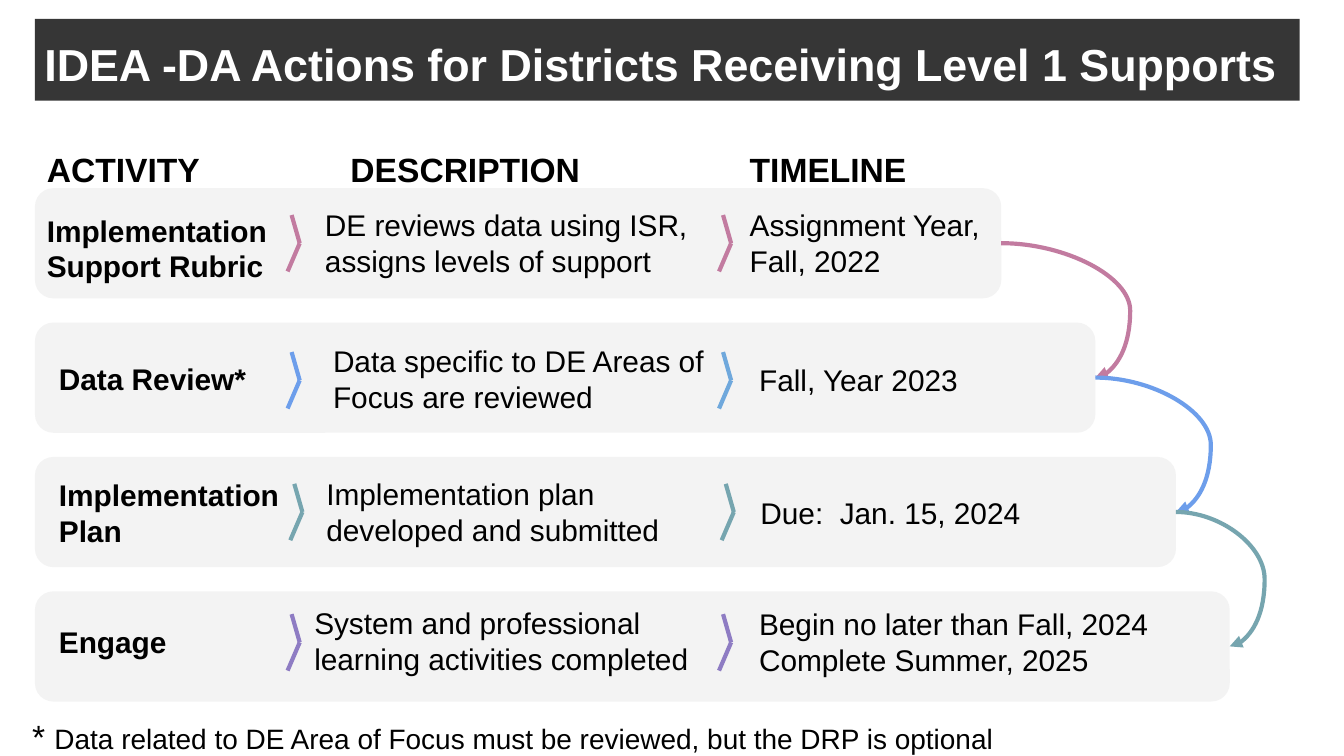
from dataclasses import dataclass
from itertools import pairwise

from lxml.etree import SubElement
from pptx import Presentation
from pptx.dml.color import RGBColor
from pptx.enum.shapes import MSO_CONNECTOR, MSO_SHAPE
from pptx.enum.text import MSO_ANCHOR, PP_ALIGN
from pptx.oxml.ns import qn
from pptx.util import Emu, Pt

PX_PER_INCH = 100
SLIDE_WIDTH = 1000
BAR_LEFT, BAR_TOP, BAR_HEIGHT, BAR_STEP = 26, 140, 82, 100
CELL_HEIGHT = 75
CHEVRON_LEFTS = (214, 535)
CURVE_BULGE = 26


@dataclass(frozen=True)
class Cell:
    text: str
    left: int
    top: int
    width: int
    middle: bool = False


@dataclass(frozen=True)
class Row:
    width: int
    activity: Cell
    description: Cell
    timeline: Cell
    colors: tuple[str, str]
    chevron_top: int
    chevron_shift: int = 0

    @property
    def right(self) -> int:
        return BAR_LEFT + self.width


HEADERS = [
    Cell("ACTIVITY", 25, 101, 189),
    Cell("DESCRIPTION", 251, 101, 223),
    Cell("TIMELINE", 548, 101, 182),
]

ROWS = [
    Row(719,
        Cell("Implementation\nSupport Rubric", 25, 147, 195, True),
        Cell("DE reviews data using ISR, assigns levels of support", 232, 144, 316),
        Cell("Assignment Year,\nFall, 2022", 548, 144, 195),
        ("C27BA0", "C27BA0"), 160),
    Row(789,
        Cell("Data Review*", 34, 244, 182, True),
        Cell("Data specific to DE Areas of Focus are reviewed", 238, 245, 310),
        Cell("Fall, Year 2023", 555, 245, 195, True),
        ("6D9EEB", "6FA8DC"), 262),
    Row(849,
        Cell("Implementation\nPlan", 34, 344, 189, True),
        Cell("Implementation plan developed and submitted", 233, 344, 316),
        Cell("Due:  Jan. 15, 2024", 556, 344, 287, True),
        ("76A5AF", "76A5AF"), 360, 2),
    Row(889,
        Cell("Engage", 34, 440, 182, True),
        Cell("System and professional\nlearning activities completed", 224, 440, 326),
        Cell("Begin no later than Fall, 2024\nComplete Summer, 2025", 555, 440, 316, True),
        ("8E7CC3", "8E7CC3"), 457),
]


def px(n: int) -> Emu:
    return Emu(n * 914400 // PX_PER_INCH)


def rgb(color: str) -> RGBColor:
    return RGBColor.from_string(color)


def set_insets(tf, x: int, top: int, bottom: int) -> None:
    tf.margin_left = tf.margin_right = px(x)
    tf.margin_top, tf.margin_bottom = px(top), px(bottom)
    tf.word_wrap = True


def format_run(r, size: int, bold: bool = False, color: str = "000000") -> None:
    r.font.name = "Arial"
    r.font.size = Pt(size)
    r.font.bold = bold
    r.font.color.rgb = rgb(color)


def add_text(s, cell: Cell, height: int, size: int, bold: bool = False):
    box = s.shapes.add_textbox(px(cell.left), px(cell.top), px(cell.width), px(height))
    tf = box.text_frame
    set_insets(tf, 10, 10, 10)
    tf.vertical_anchor = MSO_ANCHOR.MIDDLE if cell.middle else MSO_ANCHOR.TOP
    tf.text = cell.text
    for p in tf.paragraphs:
        for r in p.runs:
            format_run(r, size, bold)
    return tf


def add_block(s, kind, left: int, top: int, width: int, height: int, color: str):
    sp = s.shapes.add_shape(kind, px(left), px(top), px(width), px(height))
    sp.shadow.inherit = False
    sp.fill.solid()
    sp.fill.fore_color.rgb = rgb(color)
    sp.line.fill.background()
    return sp


def add_line(s, kind, x1: int, y1: int, x2: int, y2: int, color: str):
    line = s.shapes.add_connector(kind, px(x1), px(y1), px(x2), px(y2))
    line.line.color.rgb = rgb(color)
    line.line.width = Pt(2.25)
    SubElement(line._element.spPr, qn("a:effectLst"))
    return line


def add_chevron(s, left: int, top: int, color: str) -> None:
    points = [(left + 3, top), (left + 9, top + 21), (left, top + 42)]
    for start, end in pairwise(points):
        add_line(s, MSO_CONNECTOR.STRAIGHT, *start, *end, color)


def add_curve(s, x1: int, y1: int, x2: int, y2: int, color: str) -> None:
    curve = add_line(s, MSO_CONNECTOR.CURVE, x1, y1, x2, y2, color)
    bend = round((x2 - x1 + CURVE_BULGE) / (x2 - x1) * 100000)
    properties = curve._element.spPr
    guides = properties.find(qn("a:prstGeom")).get_or_add_avLst()
    SubElement(guides, qn("a:gd"), name="adj1", fmla=f"val {bend}")
    SubElement(properties.find(qn("a:ln")), qn("a:tailEnd"), type="triangle")


def add_row(s, row: Row, top: int) -> None:
    add_block(s, MSO_SHAPE.FLOWCHART_ALTERNATE_PROCESS,
              BAR_LEFT, top, row.width, BAR_HEIGHT, "F3F3F3")
    add_text(s, row.activity, CELL_HEIGHT, 16, bold=True)
    add_text(s, row.description, CELL_HEIGHT, 16)
    add_text(s, row.timeline, CELL_HEIGHT, 16)
    for left, color in zip(CHEVRON_LEFTS, row.colors):
        add_chevron(s, left + row.chevron_shift, row.chevron_top, color)


def add_title(s, text: str) -> None:
    sp = add_block(s, MSO_SHAPE.RECTANGLE, BAR_LEFT, 14, 941, 61, "363636")
    tf = sp.text_frame
    set_insets(tf, 7, 14, 4)
    tf.vertical_anchor = MSO_ANCHOR.MIDDLE
    tf.text = text
    p = tf.paragraphs[0]
    p.alignment = PP_ALIGN.LEFT
    p.line_spacing = 0.9
    format_run(p.runs[0], 24, True, "FFFFFF")


def main() -> None:
    prs = Presentation()
    prs.slide_width = px(SLIDE_WIDTH)
    prs.slide_height = Emu(px(SLIDE_WIDTH) * 9 // 16)
    s = prs.slides.add_slide(prs.slide_layouts[6])

    for i, row in enumerate(ROWS):
        add_row(s, row, BAR_TOP + i * BAR_STEP)
    for header in HEADERS:
        add_text(s, header, 39, 18, bold=True)
    for i, (row, following) in enumerate(pairwise(ROWS)):
        y = BAR_TOP + BAR_HEIGHT // 2 + i * BAR_STEP
        add_curve(s, row.right, y, following.right, y + BAR_STEP, row.colors[0])

    add_title(s, "IDEA -DA Actions for Districts Receiving Level 1 Supports")
    note = add_text(s, Cell("* ", 14, 523, 907), 32, 18)
    r = note.paragraphs[0].add_run()
    r.text = "Data related to DE Area of Focus must be reviewed, but the DRP is optional"
    format_run(r, 15)

    prs.save("out.pptx")


if __name__ == "__main__":
    main()
